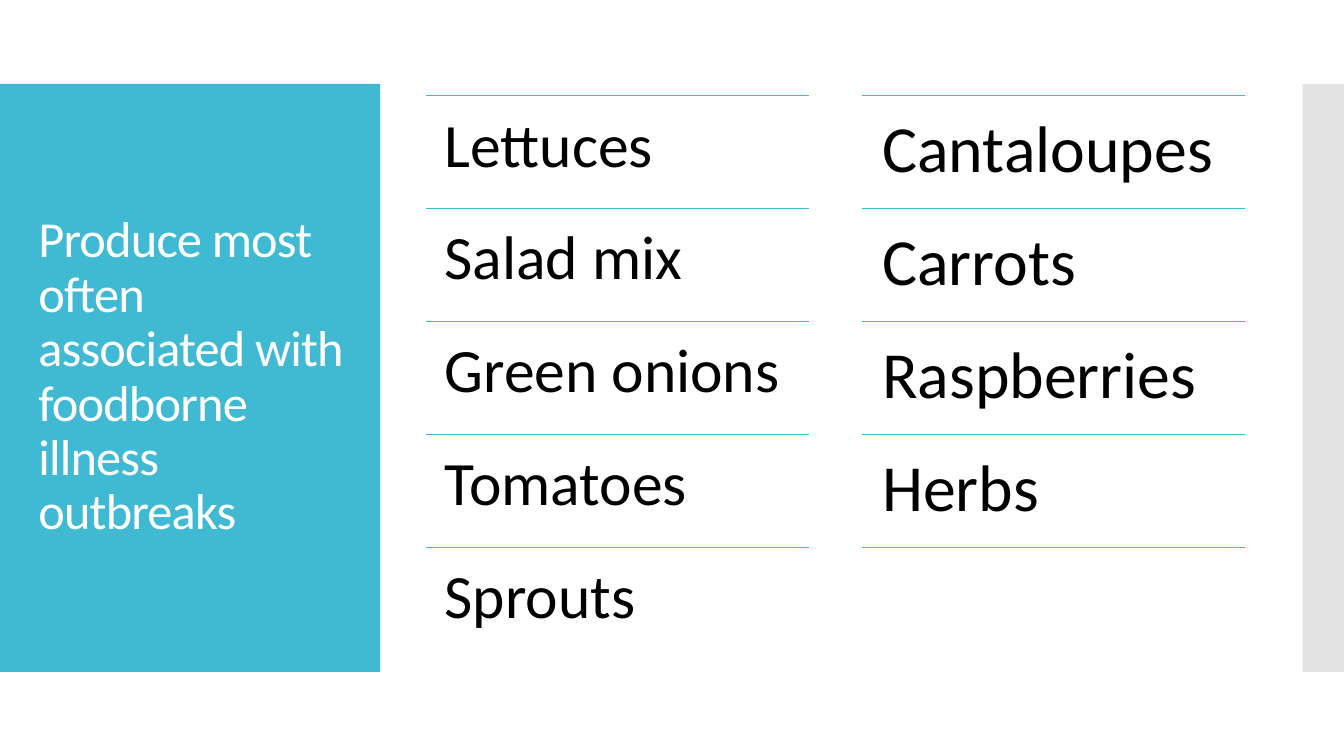
from dataclasses import dataclass

from lxml.etree import SubElement
from pptx import Presentation
from pptx.dml.color import RGBColor
from pptx.enum.shapes import MSO_CONNECTOR, MSO_SHAPE
from pptx.enum.text import MSO_ANCHOR, MSO_AUTO_SIZE, PP_ALIGN
from pptx.oxml.ns import qn
from pptx.shapes.autoshape import Shape
from pptx.slide import Slide
from pptx.text.text import TextFrame
from pptx.util import Inches, Pt

WIDTH = Inches(13.33)
HEIGHT = Inches(7.5)


@dataclass(frozen=True)
class Theme:
    teal: RGBColor = RGBColor(0x40, 0xBA, 0xD2)
    gray: RGBColor = RGBColor(0xC8, 0xC8, 0xC8)
    white: RGBColor = RGBColor(0xFF, 0xFF, 0xFF)
    black: RGBColor = RGBColor(0, 0, 0)
    font: str = "Calibri"
    title: int = 36
    rule: float = 0.85


@dataclass(frozen=True)
class Box:
    left: float
    top: float
    width: float
    height: float

    def place(self) -> tuple[int, int, int, int]:
        return (
            int(WIDTH * self.left / 100),
            int(HEIGHT * self.top / 100),
            int(WIDTH * self.width / 100),
            int(HEIGHT * self.height / 100),
        )


@dataclass(frozen=True)
class Column:
    left: float
    size: int
    inset: float
    items: tuple[str, ...]


THEME = Theme()
PANEL = Box(0, 11.11, 28.28, 77.78)
STRIP = Box(96.92, 11.11, 3.08, 77.78)
TITLE = Box(2.1, 16.4, 24.16, 67.07)
LIST_TOP = 12.67
LIST_WIDTH = 28.5
ROW = 14.93
ROWS = 5
COLUMNS = (
    Column(31.73, 44, 0.18,
           ("Lettuces", "Salad mix", "Green onions", "Tomatoes", "Sprouts")),
    Column(64.14, 47, 0.2,
           ("Cantaloupes", "Carrots", "Raspberries", "Herbs")),
)


def add_block(slide: Slide, box: Box, color: RGBColor) -> Shape:
    block = slide.shapes.add_shape(MSO_SHAPE.RECTANGLE, *box.place())
    block.shadow.inherit = False
    block.fill.solid()
    block.fill.fore_color.rgb = color
    block.line.fill.background()
    return block


def write(frame: TextFrame, text: str, size: int, color: RGBColor) -> None:
    frame.text = text
    frame.word_wrap = True
    frame.auto_size = MSO_AUTO_SIZE.NONE
    line = frame.paragraphs[0]
    line.alignment = PP_ALIGN.LEFT
    line.line_spacing = 0.9
    font = line.runs[0].font
    font.name = THEME.font
    font.size = Pt(size)
    font.color.rgb = color


def add_title(slide: Slide, text: str) -> None:
    title = slide.shapes.title
    title.left, title.top, title.width, title.height = TITLE.place()
    frame = title.text_frame
    write(frame, text, THEME.title, THEME.white)
    frame.vertical_anchor = MSO_ANCHOR.MIDDLE
    frame.paragraphs[0].runs[0]._r.get_or_add_rPr().set("spc", "-60")
    slide.shapes.element.append(title.element)


def add_rule(slide: Slide, box: Box) -> None:
    left, top, width, _ = box.place()
    rule = slide.shapes.add_connector(
        MSO_CONNECTOR.STRAIGHT, left, top, left + width, top)
    rule.line.color.rgb = THEME.teal
    rule.line.width = Pt(THEME.rule)
    SubElement(rule.element.spPr, qn("a:effectLst"))


def add_item(slide: Slide, box: Box, text: str, column: Column) -> None:
    frame = slide.shapes.add_textbox(*box.place()).text_frame
    write(frame, text, column.size, THEME.black)
    frame.vertical_anchor = MSO_ANCHOR.TOP
    inset = Inches(column.inset)
    frame.margin_left = frame.margin_right = inset
    frame.margin_top = frame.margin_bottom = inset


def add_list(slide: Slide, column: Column) -> None:
    for row in range(ROWS):
        box = Box(column.left, LIST_TOP + row * ROW, LIST_WIDTH, ROW)
        add_rule(slide, box)
        if row < len(column.items):
            add_item(slide, box, column.items[row], column)


def main() -> None:
    deck = Presentation()
    deck.slide_width = WIDTH
    deck.slide_height = HEIGHT
    slide = deck.slides.add_slide(deck.slide_layouts.get_by_name("Title Only"))
    add_block(slide, PANEL, THEME.teal)
    strip = add_block(slide, STRIP, THEME.gray)
    tint = strip.element.spPr.find(".//" + qn("a:srgbClr"))
    SubElement(tint, qn("a:alpha")).set("val", "50000")
    add_title(
        slide, "Produce most often associated with foodborne illness outbreaks")
    for column in COLUMNS:
        add_list(slide, column)
    deck.save("out.pptx")


if __name__ == "__main__":
    main()
